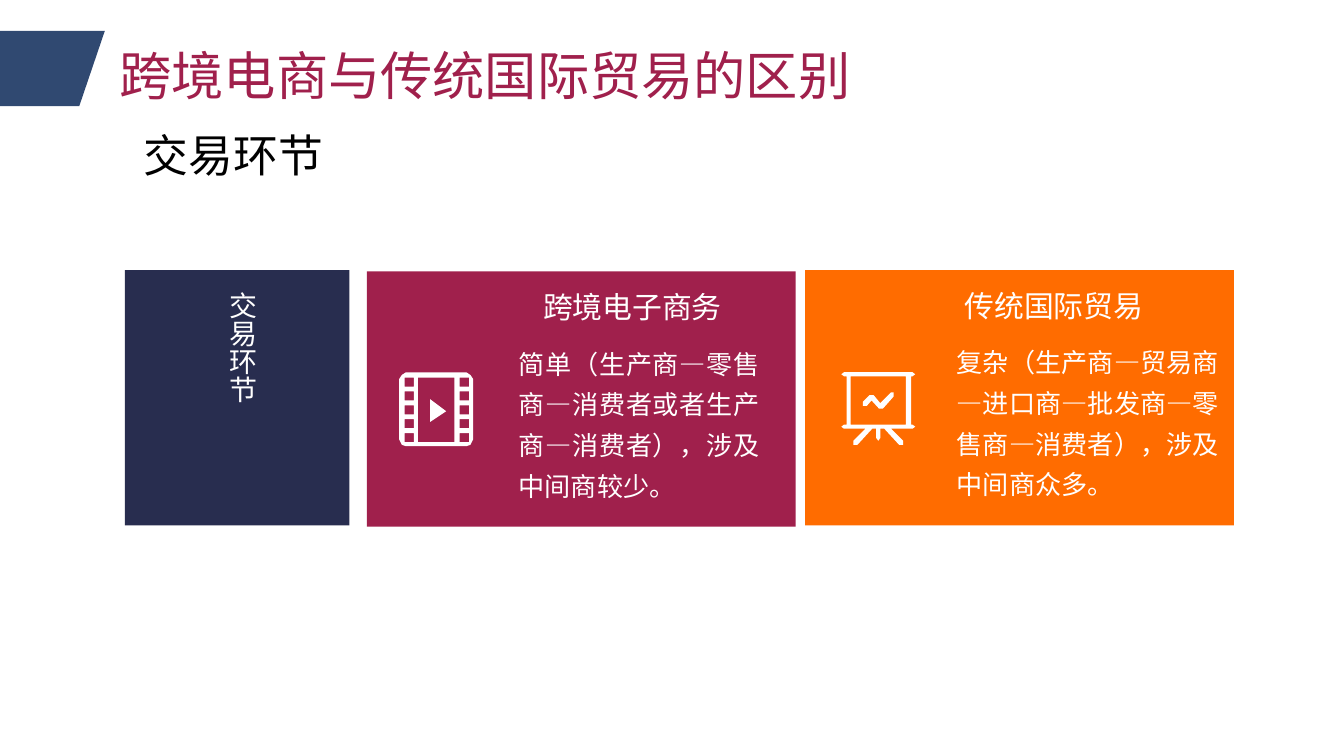
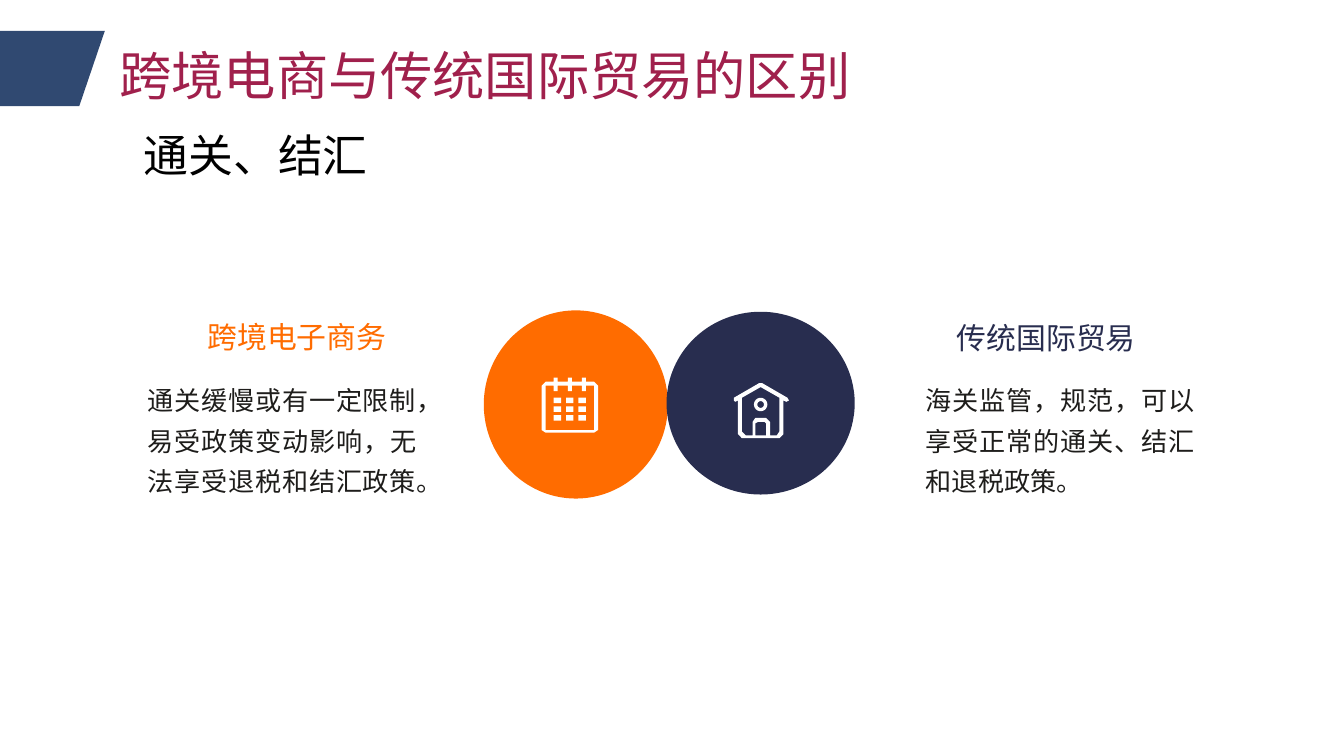
"""Build two slides that compare cross-border e-commerce with traditional trade."""
from math import cos, pi, sin

from lxml import etree
from pptx import Presentation
from pptx.dml.color import RGBColor
from pptx.enum.shapes import MSO_SHAPE
from pptx.enum.text import MSO_ANCHOR, MSO_AUTO_SIZE, PP_ALIGN
from pptx.oxml.ns import qn
from pptx.util import Inches, Pt

RECT, OVAL = MSO_SHAPE.RECTANGLE, MSO_SHAPE.OVAL
LEFT, RIGHT, MID, JUST = PP_ALIGN.LEFT, PP_ALIGN.RIGHT, PP_ALIGN.CENTER, PP_ALIGN.JUSTIFY
CENTRE, FIXED = MSO_ANCHOR.MIDDLE, MSO_AUTO_SIZE.NONE
FONT = "Noto Sans CJK SC"
NAVY, WINE, FLAME, SLATE = "282D4F", "A0204C", "FF6C00", "304971"
WHITE, BLACK, INK = "FFFFFF", "000000", "1E1D1B"
HEAD = "跨境电商与传统国际贸易的区别"
NEW, OLD = "跨境电子商务", "传统国际贸易"

deck = Presentation()
deck.slide_width, deck.slide_height = Inches(10), Inches(5.625)
UNIT = deck.slide_width // 1000
layout = deck.slide_layouts[1]


def write(shape, grid, text, size, color, align=LEFT, lines=1.0):
    """Place a text shape on the grid and fill it with one paragraph."""
    shape.left, shape.top, shape.width, shape.height = [n * UNIT for n in grid]
    frame = shape.text_frame
    frame.word_wrap, frame.auto_size = True, FIXED
    frame.text = text
    para = frame.paragraphs[0]
    props = para._p.get_or_add_pPr()
    props.set("marL", "0")
    props.set("indent", "0")
    para.alignment, para.line_spacing, para.space_before = align, lines, Pt(0)
    etree.SubElement(props, qn("a:buNone"))
    para.font.size, para.font.name = Pt(size), FONT
    para.font.color.rgb = RGBColor.from_string(color)
    etree.SubElement(props.find(qn("a:defRPr")), qn("a:ea"), typeface=FONT)
    return frame


def draw(slide, color, outline, grid=None):
    """Draw a preset on the grid, or closed loops where two points span a box."""
    if grid:
        shape = slide.shapes.add_shape(outline, *[n * UNIT for n in grid])
    else:
        loops = []
        for loop in outline:
            if len(loop) == 2:
                (x, y), (r, b) = loop
                loop = [(x, y), (r, y), (r, b), (x, b)]
            loops.append([(px * UNIT, py * UNIT) for px, py in loop])
        pen = slide.shapes.build_freeform(*loops[0][0], scale=1.0)
        for n, loop in enumerate(loops):
            if n:
                pen.move_to(*loop[0])
            pen.add_line_segments(loop[1:], close=True)
        shape = pen.convert_to_shape()
    shape.shadow.inherit = False
    shape.fill.solid()
    shape.fill.fore_color.rgb = RGBColor.from_string(color)
    shape.line.fill.background()
    return shape


slides = []
for topic in ("交易环节", "通关、结汇"):
    slide = deck.slides.add_slide(layout)
    title, body = slide.placeholders
    write(title, (79, 27, 656, 57), HEAD, 28, WINE)
    write(body, (97, 90, 266, 50), topic, 24, BLACK)
    slides.append(slide)
steps, customs = slides

band = draw(steps, SLATE, [[(0, 23), (78, 23), (59, 79), (0, 79)]])
layout.shapes.element.append(band.element)

film = [
    [(302, 277), (347, 277), (350, 279), (352, 282), (352, 327), (350, 331),
     (347, 332), (302, 332), (299, 331), (297, 327), (297, 282), (299, 279)],
    [(311, 281), (338, 281), (338, 329), (311, 329)],
    [(320, 297), (332, 306), (320, 314)],
]
for x in (301, 342):
    for row in range(5):
        y = 281 + 10.3 * row
        film.append([(x, y), (x + 7, y + 6.7)])

board = [
    [(628, 277), (679, 277), (681, 278.5), (679, 280), (678, 280), (678, 316),
     (679, 316), (681, 317.5), (679, 319), (663, 319), (672, 328), (672, 331),
     (669, 331), (658, 319), (655, 319), (655, 326), (653.5, 328), (652, 326),
     (652, 319), (649, 319), (638, 331), (635, 331), (635, 328), (644, 319),
     (628, 319), (626, 317.5), (628, 316), (630, 316), (630, 280), (628, 280),
     (626, 278.5)],
    [(633, 280), (674, 316)],
    [(645, 302), (648.5, 298), (654, 304), (657, 304), (665, 295), (665, 292),
     (663, 292), (655, 300), (650, 294), (647, 294), (642, 299), (642, 302)],
]

month = [
    [(406, 284), (442, 284), (445, 287), (445, 320), (442, 322), (406, 322),
     (403, 320), (403, 287)],
    [(406, 287), (442, 320)],
]
for x in (412, 422.5, 433):
    month += [[(x, 281), (x + 3, 284)], [(x, 287), (x + 3, 291)]]
for col in range(3):
    for row in range(3):
        x, y = 412 + 9.2 * col, 296 + 6.5 * row
        month.append([(x, y), (x + 5.5, y + 4)])

house = [
    [(546, 296), (565, 285), (567, 285), (586, 296), (587, 298), (585, 299),
     (583, 298), (583, 323), (580, 326), (552, 326), (549, 323), (549, 298),
     (547, 299), (546, 298)],
    [(552, 296), (566, 288), (580, 296), (580, 321), (578, 324), (573, 324),
     (573, 314), (570, 311), (562, 311), (560, 314), (560, 324), (555, 324),
     (552, 321)],
    [(562, 324), (562, 315), (564, 314), (569, 314), (570, 315), (570, 324)],
]
for r in (5, 2.5):
    house.append([(566 + r * cos(n * pi / 12), 301 + r * sin(n * pi / 12)) for n in range(24)])

draw(steps, NAVY, RECT, (93, 201, 167, 190))
label = write(steps.shapes.add_textbox(0, 0, 0, 0), (158, 217, 45, 102), "交易环节", 15, WHITE, MID)
label._txBody.bodyPr.set("vert", "eaVert")
label.vertical_anchor = CENTRE
label.margin_left = label.margin_right = label.margin_top = label.margin_bottom = 0

cards = [
    (599, 201, FLAME, board, OLD, (708, 160), LEFT, 215,
     "复杂（生产商—贸易商—进口商—批发商—零售商—消费者），涉及中间商众多。"),
    (273, 202, WINE, film, NEW, (386, 161), RIGHT, 199,
     "简单（生产商—零售商—消费者或者生产商—消费者），涉及中间商较少。"),
]
for x, y, fill, icon, name, (left, wide), align, span, text in cards:
    draw(steps, fill, RECT, (x, y, 319, 190))
    write(steps.shapes.add_textbox(0, 0, 0, 0), (x + 103, y + 45, span, 132),
          text, 14, WHITE, JUST, 1.3)
    draw(steps, WHITE, icon)
    write(steps.shapes.add_textbox(0, 0, 0, 0), (left, y + 8, wide, 37), name, 16, WHITE, align)

sides = [
    (FLAME, (360, 231, 137, 140), month, NEW, (136, 232, 170, 37), 100,
     "通关缓慢或有一定限制，易受政策变动影响，无法享受退税和结汇政策。"),
    (NAVY, (496, 232, 140, 136), house, OLD, (699, 233, 159, 37), 679,
     "海关监管，规范，可以享受正常的通关、结汇和退税政策。"),
]
for fill, disc, icon, name, place, x, text in sides:
    draw(customs, fill, OVAL, disc)
    draw(customs, WHITE, icon)
    write(customs.shapes.add_textbox(0, 0, 0, 0), place, name, 16, fill, MID)
    write(customs.shapes.add_textbox(0, 0, 0, 0), (x, 274, 220, 102), text, 14, INK, JUST, 1.3)

deck.save("out.pptx")
